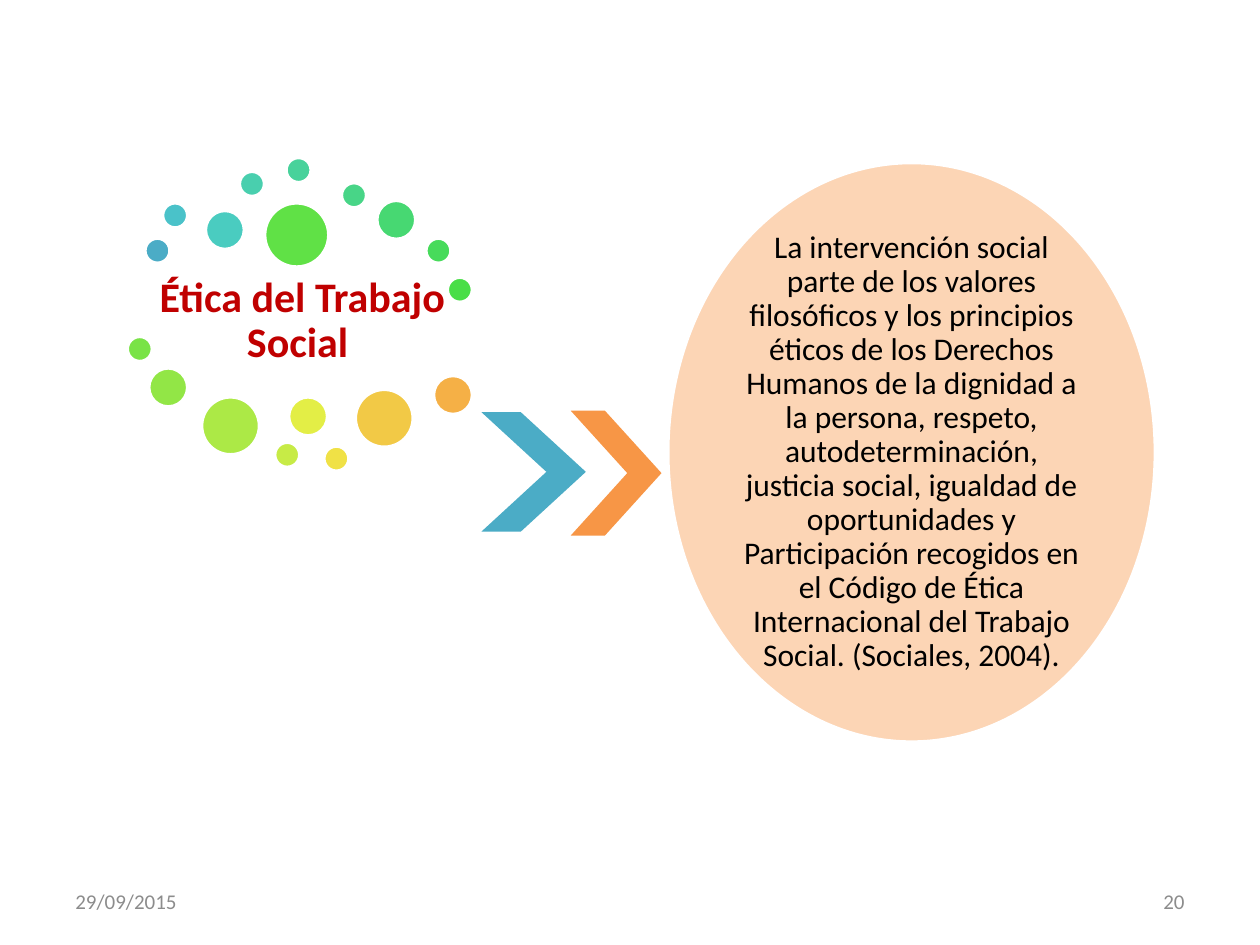
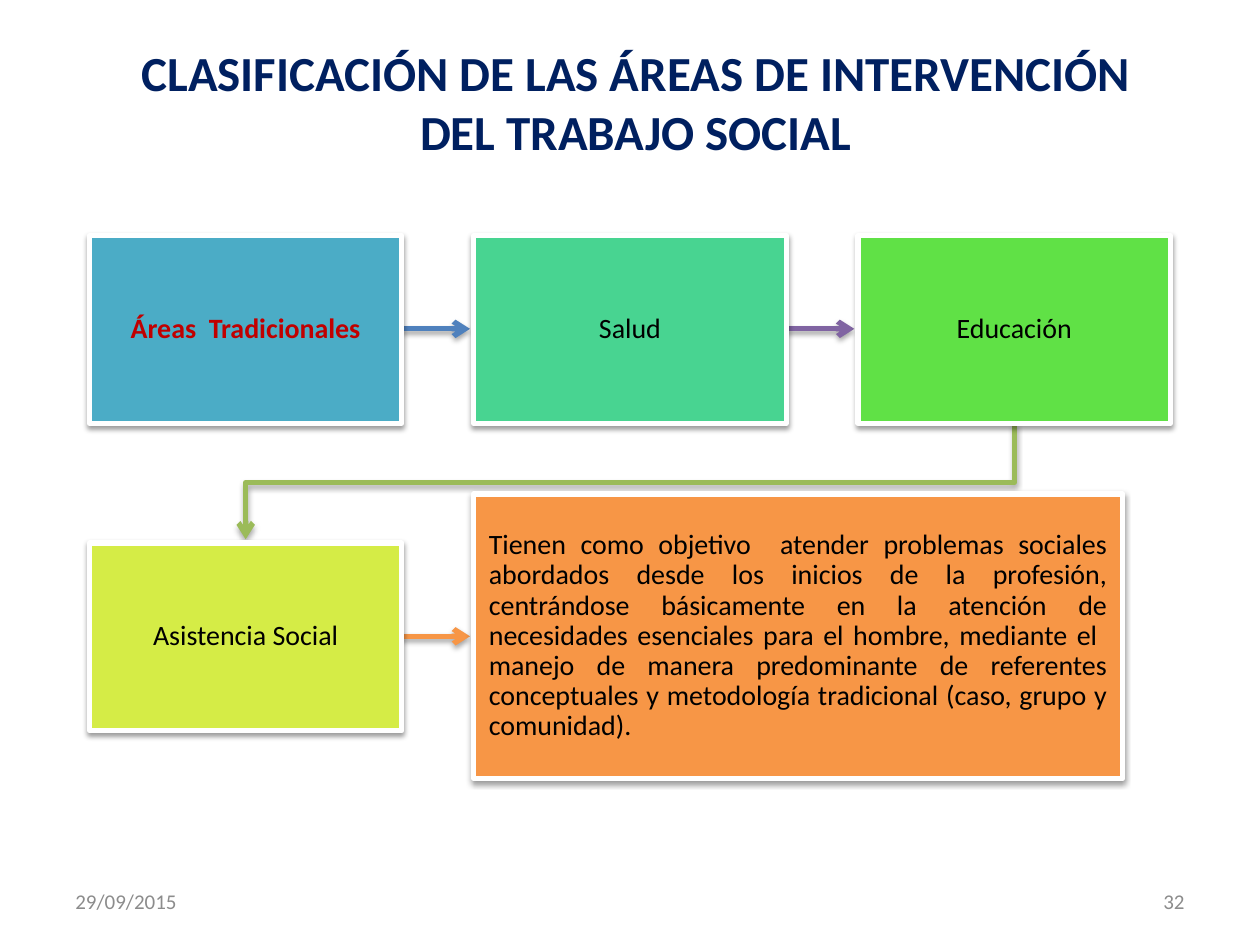
"""Builds two slides on the ethics and the areas of intervention of social work."""
from lxml.etree import SubElement
from pptx import Presentation
from pptx.dml.color import RGBColor
from pptx.enum.shapes import MSO_CONNECTOR as CONN, MSO_SHAPE as SHAPE
from pptx.enum.text import MSO_ANCHOR as ANCHOR, PP_ALIGN as ALIGN
from pptx.oxml.ns import qn
from pptx.util import Emu, Pt

FONT = "Calibri"
BLACK, WHITE, RED, NAVY, GREY = "000000", "FFFFFF", "C00000", "002060", "8C8C8C"
TEAL, ORANGE, GREEN = "4BACC6", "F79646", "60E146"
DATE = "29/09/2015"

DOTS = [
    (115, 189, 20, TEAL), (129, 161, 20, "4AC2C9"), (163, 167, 31, "4ACCC0"),
    (190, 136, 20, "49CFAE"), (227, 125, 20, "48D29B"), (271, 145, 20, "48D587"),
    (299, 159, 31, "47D872"), (338, 189, 20, "47DB5B"), (355, 220, 20, "49DE47"),
    (210, 161, 51, GREEN), (101, 267, 20, "79E346"), (118, 292, 31, "92E646"),
    (160, 315, 46, "ACE946"), (218, 351, 20, "C7EB46"), (229, 315, 31, "E3EE46"),
    (257, 354, 20, "F0E146"), (282, 309, 46, "F2C946"), (344, 298, 31, "F5B046"),
]
ETHICS = (
    "La intervención social parte de los valores filosóficos y los principios éticos "
    "de los Derechos Humanos de la dignidad a la persona, respeto, autodeterminación, "
    "justicia social, igualdad de oportunidades y Participación recogidos en el Código "
    "de Ética Internacional del Trabajo Social. (Sociales, 2004)."
)
GOAL = (
    "Tienen como objetivo  atender problemas sociales abordados desde los inicios de la "
    "profesión, centrándose básicamente en la atención de necesidades esenciales para el "
    "hombre, mediante el  manejo de manera predominante de referentes conceptuales y "
    "metodología tradicional (caso, grupo y comunidad)."
)


def px(n):
    return Emu(n * 9144)


def rgb(color):
    return RGBColor.from_string(color)


class Deck:
    def __init__(self):
        self.prs = Presentation()
        self.prs.slide_width, self.prs.slide_height = px(1000), px(750)

    def slide(self, number):
        self.shapes = self.prs.slides.add_slide(self.prs.slide_layouts[6]).shapes
        self.text(50, 695, 233, 40, DATE, 12, GREY, align=ALIGN.LEFT)
        self.text(717, 695, 233, 40, number, 12, GREY, align=ALIGN.RIGHT)

    def label(self, sp, text, size, color=BLACK, bold=False, align=ALIGN.CENTER,
              anchor=ANCHOR.MIDDLE, inset=None, spacing=None):
        tf = sp.text_frame
        tf.word_wrap, tf.vertical_anchor = True, anchor
        if inset is not None:
            tf.margin_left = tf.margin_right = px(inset)
            tf.margin_top = tf.margin_bottom = px(inset)
        p = tf.paragraphs[0]
        p.alignment, p.line_spacing = align, spacing
        r = p.add_run()
        r.text = text
        r.font.name, r.font.size, r.font.bold = FONT, Pt(size), bold
        r.font.color.rgb = rgb(color)

    def text(self, x, y, w, h, text, size, color, **style):
        sp = self.shapes.add_textbox(px(x), px(y), px(w), px(h))
        self.label(sp, text, size, color, **style)

    def shape(self, kind, x, y, w, h, fill, line=None):
        sp = self.shapes.add_shape(kind, px(x), px(y), px(w), px(h))
        sp.shadow.inherit = False
        sp.fill.solid()
        sp.fill.fore_color.rgb = rgb(fill)
        if line:
            sp.line.color.rgb, sp.line.width = rgb(WHITE), Pt(line)
        else:
            sp.line.fill.background()
        return sp

    def chevron(self, x, y, w, h, fill):
        self.shape(SHAPE.CHEVRON, x, y, w, h, fill).adjustments[0] = 0.623

    def shadow(self, sp, alpha, dist):
        spPr = sp.element.spPr
        effects = spPr.find(qn("a:effectLst"))
        if effects is None:
            effects = SubElement(spPr, qn("a:effectLst"))
        outer = SubElement(effects, qn("a:outerShdw"), blurRad=str(Pt(3.1)),
                           dist=str(Pt(dist)), dir="5400000", rotWithShape="0")
        color = SubElement(outer, qn("a:srgbClr"), val=BLACK)
        SubElement(color, qn("a:alpha"), val=str(alpha * 1000))

    def box(self, x, y, w, h, fill, text, **style):
        sp = self.shape(SHAPE.RECTANGLE, x, y, w, h, fill, line=3)
        self.shadow(sp, 38, 1.6)
        self.label(sp, text, 16, inset=12, spacing=0.9, **style)

    def arrow(self, color, *points):
        points = [(px(x), px(y)) for x, y in points]
        if len(points) == 2:
            sp = self.shapes.add_connector(CONN.STRAIGHT, *points[0], *points[1])
        else:
            outline = self.shapes.build_freeform(*points[0])
            outline.add_line_segments(points[1:], close=False)
            sp = outline.convert_to_shape()
            sp.shadow.inherit = False
            sp.fill.background()
        sp.line.color.rgb, sp.line.width = rgb(color), Pt(3)
        SubElement(sp.element.spPr.find(qn("a:ln")), qn("a:tailEnd"), type="arrow")
        self.shadow(sp, 35, 1.8)


def ethics_slide(deck):
    deck.slide("20")
    deck.text(115, 214, 250, 82, "Ética del Trabajo Social ", 24, RED, bold=True,
              inset=3, spacing=0.9)
    for x, y, size, fill in DOTS:
        deck.shape(SHAPE.OVAL, x, y, size, size, fill, line=2)
    deck.chevron(382, 327, 83, 95, TEAL)
    deck.chevron(453, 326, 72, 99, ORANGE)
    sp = deck.shape(SHAPE.OVAL, 530, 129, 387, 460, "FCD5B5", line=2)
    deck.label(sp, ETHICS, 18, inset=0, spacing=0.9)


def areas_slide(deck):
    deck.slide("32")
    deck.text(83, 29, 843, 104,
              "CLASIFICACIÓN DE LAS ÁREAS DE INTERVENCIÓN DEL TRABAJO SOCIAL",
              28, NAVY, bold=True, anchor=ANCHOR.TOP)
    w, h, gap = 248, 149, 57
    cols = [71 + i * (w + gap) for i in range(3)]
    top, bottom = 187, 431
    rows = [(cols[0], top, "4F81BD"), (cols[1], top, "8064A2"), (cols[0], bottom, ORANGE)]
    for x, y, color in rows:
        mid = y + h // 2
        deck.arrow(color, (x + w, mid), (x + w + 54, mid))
    first, last = cols[0] + w // 2, cols[2] + w // 2
    deck.arrow("9BBB59", (last, top + h), (last, 383), (first, 383), (first, 428))
    deck.box(cols[0], top, w, h, TEAL, "Áreas  Tradicionales", color=RED, bold=True)
    deck.box(cols[1], top, w, h, "48D491", "Salud")
    deck.box(cols[2], top, w, h, GREEN, "Educación")
    deck.box(cols[0], bottom, w, h, "D5EC46", "Asistencia Social")
    deck.box(cols[1], 392, 515, 226, ORANGE, GOAL, align=ALIGN.JUSTIFY)


def main():
    deck = Deck()
    ethics_slide(deck)
    areas_slide(deck)
    deck.prs.save("out.pptx")


if __name__ == "__main__":
    main()
